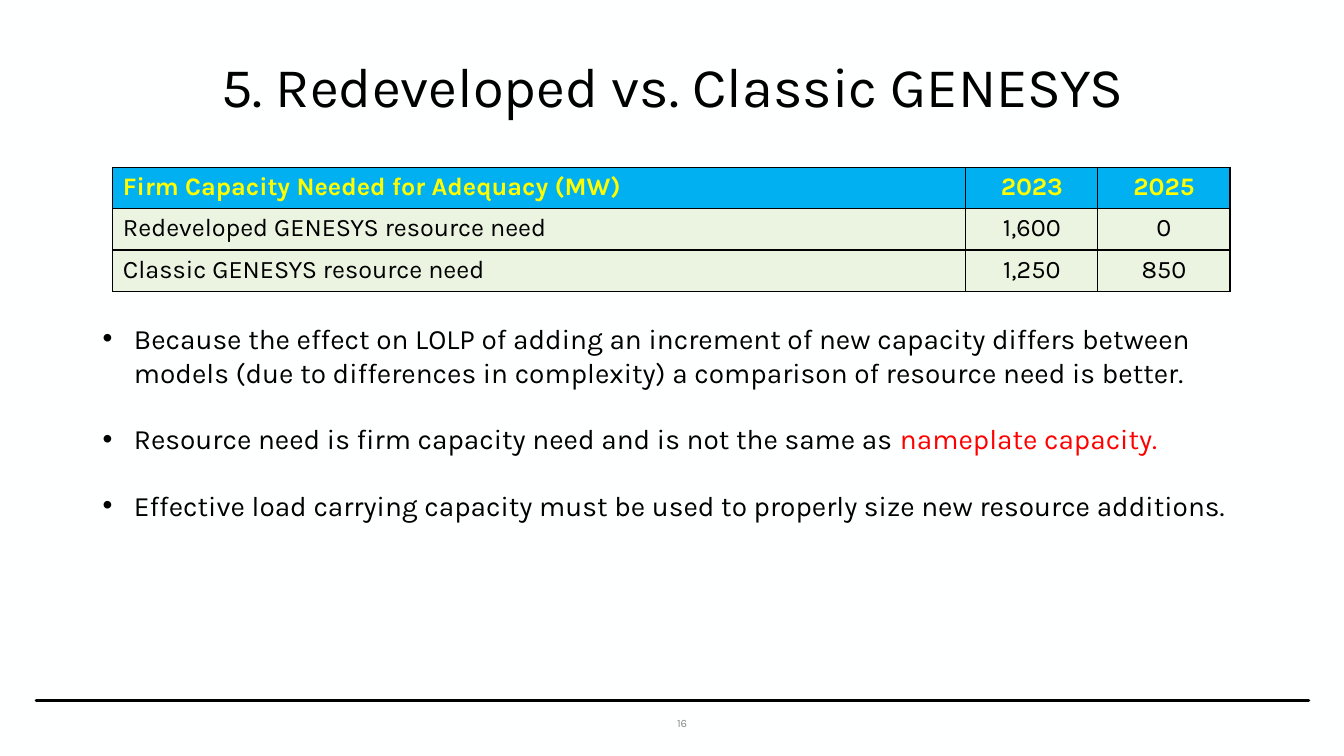
from typing import NamedTuple

from lxml import etree
from pptx import Presentation
from pptx import util as u
from pptx.dml.color import RGBColor
from pptx.enum import shapes, text
from pptx.oxml import ns

FONT = "Karla"
BLACK = RGBColor(0x00, 0x00, 0x00)
PAPER = RGBColor(0xFE, 0xFF, 0xFF)
YELLOW = RGBColor(0xFF, 0xFF, 0x00)
BLUE = RGBColor(0x00, 0xB0, 0xF0)
PALE_GREEN = RGBColor(0xEB, 0xF3, 0xE1)
RED = RGBColor(0xFF, 0x00, 0x00)
GREY = RGBColor(0x8C, 0x8C, 0x8C)

WIDTH, HEIGHT = u.Inches(13.33), u.Inches(7.5)
LEFT, CENTER = text.PP_ALIGN.LEFT, text.PP_ALIGN.CENTER
TOP, MIDDLE = text.MSO_ANCHOR.TOP, text.MSO_ANCHOR.MIDDLE
BULLET_INDENT = u.Inches(0.31)
BULLET_GAP = 23.5
COLUMN_SHARES = (63.46, 9.83, 9.83)
ROW_SHARE = 5.47


class Box(NamedTuple):
    left: float
    top: float
    width: float
    height: float

    def emu(self) -> tuple:
        return across(self.left), down(self.top), across(self.width), down(self.height)


class Run(NamedTuple):
    text: str
    color: RGBColor = BLACK


class Row(NamedTuple):
    cells: tuple
    fill: RGBColor = PALE_GREEN
    color: RGBColor = BLACK
    bold: bool = False


ROWS = (
    Row(("Firm Capacity Needed for Adequacy (MW)", "2023", "2025"), BLUE, YELLOW, True),
    Row(("Redeveloped GENESYS resource need", "1,600", "0")),
    Row(("Classic GENESYS resource need", "1,250", "850")),
)
BULLETS = (
    (Run("Because the effect on LOLP of adding an increment of new capacity differs between "
         "models (due to differences in complexity) a comparison of resource need is better."),),
    (Run("Resource need is firm capacity need and is not the same as "),
     Run("nameplate capacity.", RED)),
    (Run("Effective load carrying capacity must be used to properly size new resource additions."),),
)


def across(percent: float) -> int:
    return int(WIDTH * percent / 100)


def down(percent: float) -> int:
    return int(HEIGHT * percent / 100)


def write(p, *runs: Run, size: float, bold: bool = False, align=LEFT,
          spacing: float = 1.0, before: float = 0, bullet: bool = False) -> None:
    p.alignment, p.line_spacing, p.space_before = align, spacing, u.Pt(before)
    if bullet:
        pPr = p._p.get_or_add_pPr()
        pPr.set("marL", str(BULLET_INDENT))
        pPr.set("indent", str(-BULLET_INDENT))
        etree.SubElement(pPr, ns.qn("a:buFont")).set("typeface", "Arial")
        etree.SubElement(pPr, ns.qn("a:buChar")).set("char", "•")
    for run in runs:
        r = p.add_run()
        r.text = run.text
        r.font.name, r.font.size, r.font.bold = FONT, u.Pt(size), bold
        r.font.color.rgb = run.color


def add_label(s, box: Box, run: Run, **style) -> None:
    tf = s.shapes.add_textbox(*box.emu()).text_frame
    tf.word_wrap, tf.vertical_anchor = True, MIDDLE
    write(tf.paragraphs[0], run, align=CENTER, **style)


def add_borders(cell) -> None:
    tcPr = cell._tc.get_or_add_tcPr()
    for i, side in enumerate(("lnL", "lnR", "lnT", "lnB")):
        ln = etree.Element(ns.qn(f"a:{side}"), w=str(u.Pt(1)))
        fill = etree.SubElement(ln, ns.qn("a:solidFill"))
        etree.SubElement(fill, ns.qn("a:srgbClr")).set("val", str(BLACK))
        tcPr.insert(i, ln)


def add_capacity_table(s) -> None:
    box = Box(8.4, 22.13, sum(COLUMN_SHARES), ROW_SHARE * len(ROWS))
    table = s.shapes.add_table(len(ROWS), len(COLUMN_SHARES), *box.emu()).table
    for column, share in zip(table.columns, COLUMN_SHARES):
        column.width = across(share)
    for i, row in enumerate(ROWS):
        table.rows[i].height = down(ROW_SHARE)
        for j, value in enumerate(row.cells):
            cell = table.cell(i, j)
            cell.fill.solid()
            cell.fill.fore_color.rgb = row.fill
            add_borders(cell)
            write(cell.text_frame.paragraphs[0], Run(value, row.color), size=18,
                  bold=row.bold, align=CENTER if j else LEFT)


def add_bullets(s, box: Box) -> None:
    sp = s.shapes.add_shape(shapes.MSO_SHAPE.RECTANGLE, *box.emu())
    sp.shadow.inherit = False
    sp.fill.solid()
    sp.fill.fore_color.rgb = PAPER
    sp.line.fill.background()
    tf = sp.text_frame
    tf.word_wrap, tf.vertical_anchor = True, TOP
    for i, runs in enumerate(BULLETS):
        p = tf.add_paragraph() if i else tf.paragraphs[0]
        write(p, *runs, size=20, before=BULLET_GAP if i else 0, bullet=True)


def add_footer_rule(s) -> None:
    y = down(92.67)
    line = s.shapes.add_connector(shapes.MSO_CONNECTOR.STRAIGHT, across(2.7), y, across(97.37), y)
    line.line.color.rgb = BLACK
    line.line.width = u.Pt(2.5)
    line.line._get_or_add_ln().set("cap", "rnd")
    etree.SubElement(line._element.spPr, ns.qn("a:effectLst"))


def main() -> None:
    prs = Presentation()
    prs.slide_width, prs.slide_height = WIDTH, HEIGHT
    s = prs.slides.add_slide(prs.slide_layouts[6])
    s.background.fill.solid()
    s.background.fill.fore_color.rgb = PAPER
    add_footer_rule(s)
    add_label(s, Box(6.9, 5.33, 86.25, 13.07), Run("5. Redeveloped vs. Classic GENESYS"),
              size=40, spacing=0.9)
    add_capacity_table(s)
    add_label(s, Box(47.86, 93.6, 5.78, 4), Run("16", GREY), size=8)
    add_bullets(s, Box(6.9, 41.87, 87, 28.27))
    prs.save("out.pptx")


if __name__ == "__main__":
    main()
